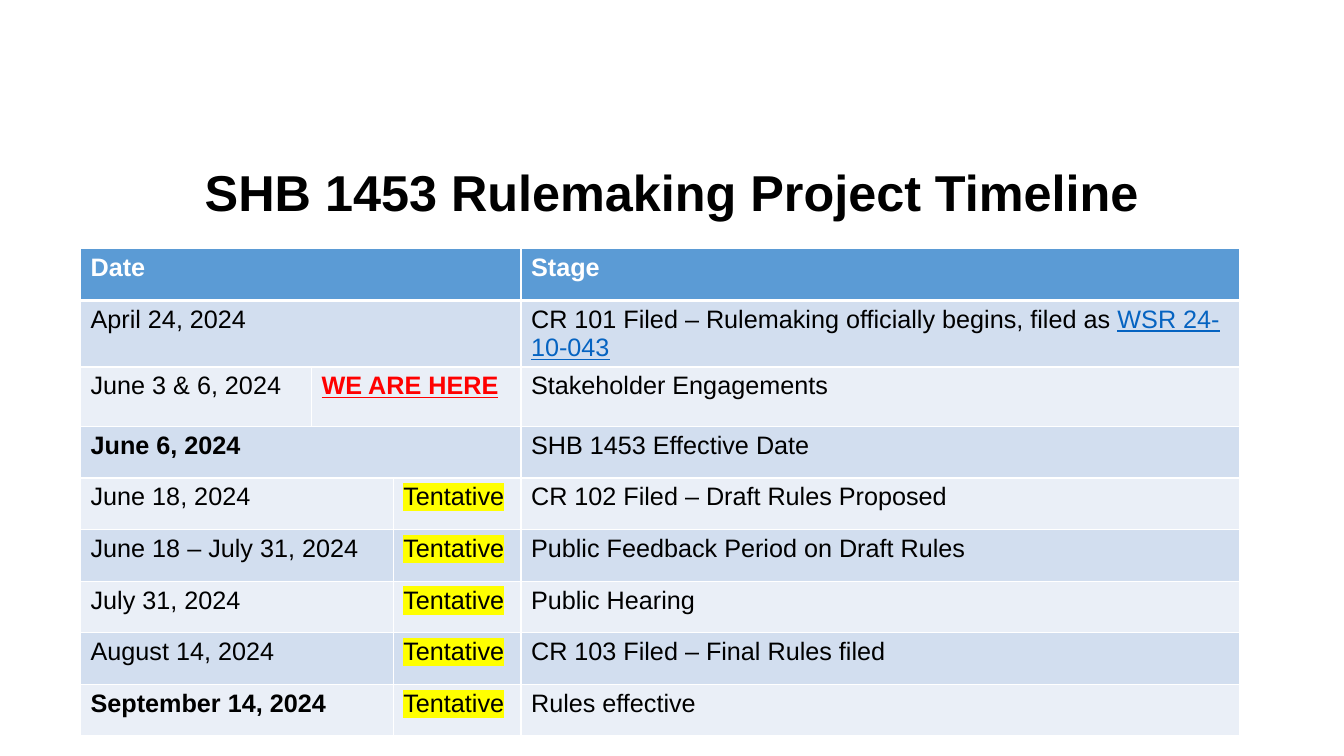
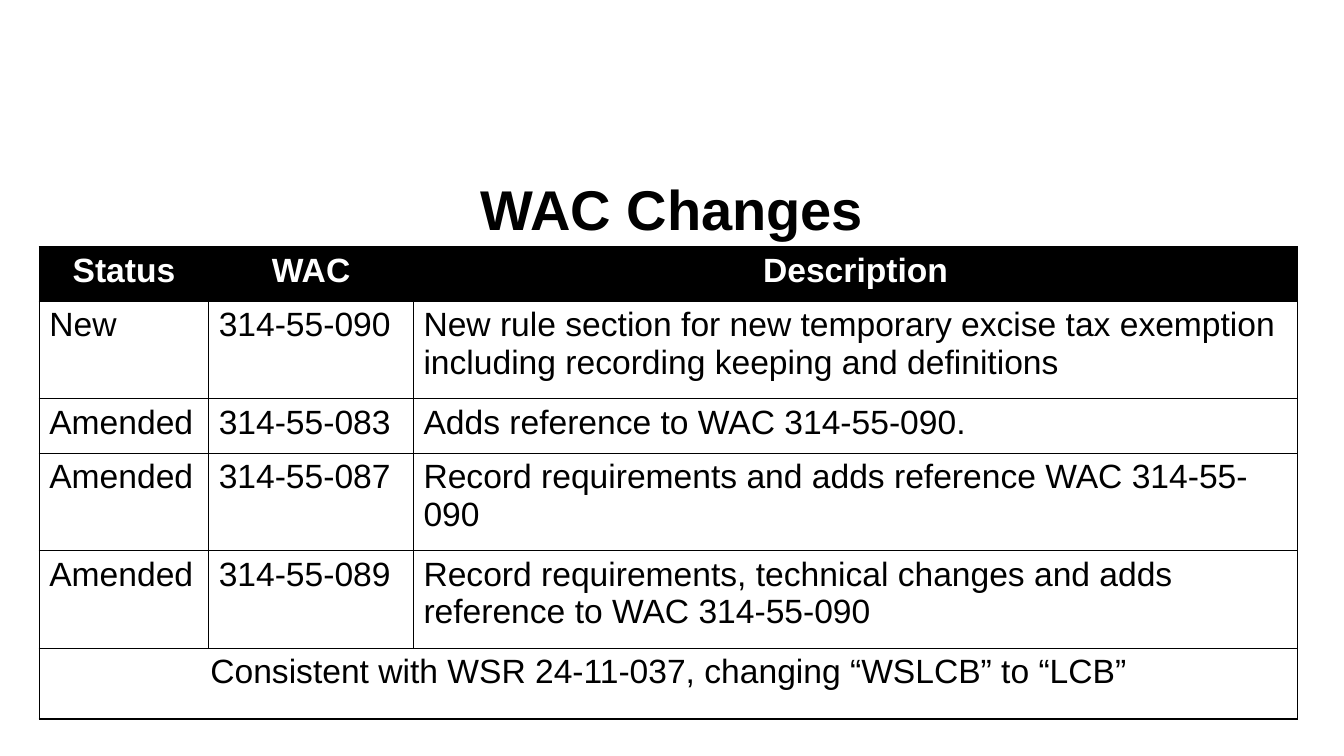
from lxml import etree
from pptx import Presentation
from pptx.dml.color import RGBColor
from pptx.enum import text
from pptx.oxml import ns
from pptx.util import Cm, Pt

BLACK = RGBColor(0x00, 0x00, 0x00)
WHITE = RGBColor(0xFF, 0xFF, 0xFF)
RED = RGBColor(0xFF, 0x00, 0x00)
YELLOW = RGBColor(0xFF, 0xFF, 0x00)
LINK_BLUE = RGBColor(0x05, 0x63, 0xC1)
HEADER_BLUE = RGBColor(0x5B, 0x9B, 0xD5)
BAND_DARK = RGBColor(0xD2, 0xDE, 0xEF)
BAND_LIGHT = RGBColor(0xEA, 0xEF, 0xF7)
FONT = "Arial"


def add_run(paragraph, words, size, color=BLACK, bold=False, underline=False, highlight=None):
    run = paragraph.add_run()
    run.text = words
    font = run.font
    font.name, font.size, font.bold = FONT, Pt(size), bold
    font.color.rgb = color
    if underline:
        font.underline = True
    if highlight is not None:
        properties = run._r.get_or_add_rPr()
        mark = etree.Element(ns.qn("a:highlight"))
        etree.SubElement(mark, ns.qn("a:srgbClr"), val=str(highlight))
        properties.find(ns.qn("a:solidFill")).addnext(mark)


def add_titled_table(heading, heading_size, heading_height, left, top, widths, heights, border, header_rule):
    slide = deck.slides.add_slide(deck.slide_layouts[5])
    title = slide.shapes.title
    title.left, title.top = Cm(2.33), Cm(4.06)
    title.width, title.height = Cm(29.21), Cm(heading_height)
    title.text_frame.vertical_anchor = text.MSO_ANCHOR.MIDDLE
    paragraph = title.text_frame.paragraphs[0]
    paragraph.alignment = text.PP_ALIGN.CENTER
    paragraph.line_spacing = 0.9
    add_run(paragraph, heading, heading_size, bold=True)

    table = slide.shapes.add_table(
        len(heights), len(widths), Cm(left), Cm(top), Cm(sum(widths)), Cm(sum(heights))
    ).table
    for column, width in zip(table.columns, widths):
        column.width = Cm(width)
    for index, (row, height) in enumerate(zip(table.rows, heights)):
        row.height = Cm(height)
        for cell in row.cells:
            properties = cell._tc.get_or_add_tcPr()
            for edge in ("lnL", "lnR", "lnT", "lnB"):
                under_header = (index, edge) in ((0, "lnB"), (1, "lnT"))
                line = etree.SubElement(
                    properties, ns.qn(f"a:{edge}"), w=str(Pt(header_rule if under_header else 1))
                )
                fill = etree.SubElement(line, ns.qn("a:solidFill"))
                etree.SubElement(fill, ns.qn("a:srgbClr"), val=str(border))
    return table


deck = Presentation()
deck.slide_width, deck.slide_height = Cm(33.87), Cm(19.05)

timeline = add_titled_table(
    "SHB 1453 Rulemaking Project Timeline", 36, 1.7, 2.03, 6.27,
    [5.82, 2.06, 3.22, 18.11], [1.3, 1.3, 1.5] + [1.3] * 6, WHITE, 3,
)
HERE = "WE ARE HERE"
TENTATIVE = "Tentative"
stages = [
    ("Date", None, "Stage"),
    ("April 24, 2024", None, "CR 101 Filed – Rulemaking officially begins, filed as "),
    ("June 3 & 6, 2024", HERE, "Stakeholder Engagements"),
    ("June 6, 2024", None, "SHB 1453 Effective Date"),
    ("June 18, 2024", TENTATIVE, "CR 102 Filed – Draft Rules Proposed"),
    ("June 18 – July 31, 2024", TENTATIVE, "Public Feedback Period on Draft Rules"),
    ("July 31, 2024", TENTATIVE, "Public Hearing"),
    ("August 14, 2024", TENTATIVE, "CR 103 Filed – Final Rules filed"),
    ("September 14, 2024", TENTATIVE, "Rules effective"),
]
merged_columns = {None: (0, 2), HERE: (1, 2), TENTATIVE: (0, 1)}
key_dates = ("June 6, 2024", "September 14, 2024")
for index, (date, flag, stage) in enumerate(stages):
    is_header = index == 0
    band = HEADER_BLUE if is_header else BAND_DARK if index % 2 else BAND_LIGHT
    ink = WHITE if is_header else BLACK
    for cell in timeline.rows[index].cells:
        cell.fill.solid()
        cell.fill.fore_color.rgb = band
    first, last = merged_columns[flag]
    timeline.cell(index, first).merge(timeline.cell(index, last))
    date_line, here_line, tentative_line, stage_line = (
        cell.text_frame.paragraphs[0] for cell in timeline.rows[index].cells
    )
    add_run(date_line, date, 18, ink, bold=is_header or date in key_dates)
    add_run(stage_line, stage, 18, ink, bold=is_header)
    if flag == HERE:
        add_run(here_line, flag, 18, RED, bold=True, underline=True)
    elif flag == TENTATIVE:
        add_run(tentative_line, flag, 18, highlight=YELLOW)
filing_line = timeline.cell(1, 3).text_frame.paragraphs[0]
add_run(filing_line, "WSR 24-10-043", 18, LINK_BLUE, underline=True)

wac_changes = add_titled_table(
    "WAC Changes", 40, 2.57, 0.99, 6.22,
    [4.27, 5.16, 22.28], [1.37, 2.46, 1.37, 2.46, 2.46, 1.78], BLACK, 1,
)
changes = [
    ("Status", "WAC", "Description"),
    ("New", "314-55-090",
     "New rule section for new temporary excise tax exemption including recording keeping and definitions"),
    ("Amended", "314-55-083", "Adds reference to WAC 314-55-090."),
    ("Amended", "314-55-087", "Record requirements and adds reference WAC 314-55-090"),
    ("Amended", "314-55-089", "Record requirements, technical changes and adds reference to WAC 314-55-090"),
    ("Consistent with WSR 24-11-037, changing “WSLCB” to “LCB”",),
]
for index, change in enumerate(changes):
    is_header = index == 0
    is_note = len(change) == 1
    for cell in wac_changes.rows[index].cells:
        if is_header:
            cell.fill.solid()
            cell.fill.fore_color.rgb = BLACK
        else:
            cell.fill.background()
    if is_note:
        wac_changes.cell(index, 0).merge(wac_changes.cell(index, 2))
    for cell, words in zip(wac_changes.rows[index].cells, change):
        paragraph = cell.text_frame.paragraphs[0]
        if is_header or is_note:
            paragraph.alignment = text.PP_ALIGN.CENTER
        add_run(paragraph, words, 24, WHITE if is_header else BLACK, bold=is_header)

deck.save("out.pptx")
